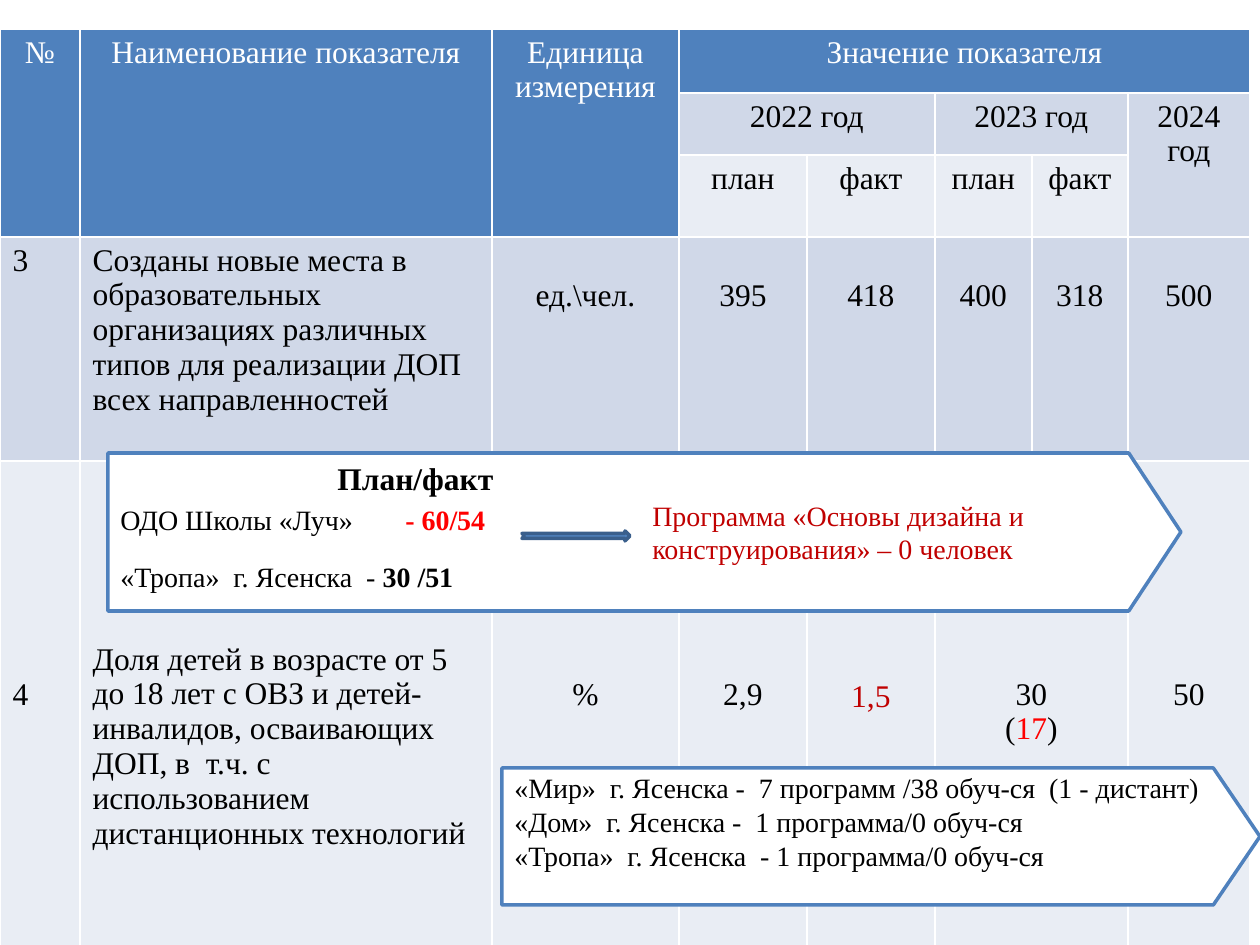
"""Build the slide with planned and actual indicator values."""
from lxml.etree import SubElement
from pptx import Presentation
from pptx.dml.color import RGBColor
from pptx.enum.shapes import MSO_SHAPE
from pptx.enum.text import MSO_ANCHOR, PP_ALIGN
from pptx.oxml.ns import qn
from pptx.util import Pt

EMU_PER_PX = 914400 / 126
BLUE, DARK_BLUE, BAND, LIGHT = "4F81BD", "3A5F8C", "D0D8E8", "E9EDF4"
WHITE, BLACK, RED, DARK_RED = "FFFFFF", "000000", "FF0000", "C00000"
LEFT, CENTER = PP_ALIGN.LEFT, PP_ALIGN.CENTER


def px(length):
    return round(length * EMU_PER_PX)


def rgb(value):
    return RGBColor.from_string(value)


def write(frame, paragraphs, size=18, color=BLACK, bold=False, align=LEFT, gap=0, tab=None):
    """Fill a frame; a paragraph is a string or a list of (text, color, bold) runs."""
    frame.word_wrap = True
    for index, content in enumerate(paragraphs):
        paragraph = frame.add_paragraph() if index else frame.paragraphs[0]
        paragraph.alignment = align
        if index and gap:
            paragraph.space_before = Pt(gap)
        if tab:
            stops = SubElement(paragraph._p.get_or_add_pPr(), qn("a:tabLst"))
            SubElement(stops, qn("a:tab"), pos=str(px(tab)), algn="l")
        runs = [(content, color, bold)] if isinstance(content, str) else content
        for text, run_color, run_bold in runs:
            run = paragraph.add_run()
            run.text = text
            run.font.name = "Times New Roman"
            run.font.size = Pt(size)
            run.font.bold = run_bold
            run.font.color.rgb = rgb(run_color)


class IndicatorSlide:
    """Hold the current slide and draw its elements in one style."""

    def __init__(self, slide):
        self.shapes = slide.shapes

    def table(self, left, top, widths, heights, fills):
        table = self.shapes.add_table(len(heights), len(widths), px(left), px(top),
                                      px(sum(widths)), px(sum(heights))).table
        table.first_row = table.horz_banding = False
        for column, width in zip(table.columns, widths):
            column.width = px(width)
        for row, height, fill in zip(table.rows, heights, fills):
            row.height = px(height)
            for cell in row.cells:
                self.border(cell)
                self.paint(cell, fill)
        return table

    def border(self, cell):
        properties = cell._tc.get_or_add_tcPr()
        for side in ("lnL", "lnR", "lnT", "lnB"):
            line = SubElement(properties, qn(f"a:{side}"), w=str(Pt(1)))
            SubElement(SubElement(line, qn("a:solidFill")), qn("a:srgbClr"), val=WHITE)

    def paint(self, item, fill):
        item.fill.solid()
        item.fill.fore_color.rgb = rgb(fill)

    def cell(self, table, row, column, paragraphs, span=(1, 1), top=6, **style):
        cell = table.cell(row, column)
        if span != (1, 1):
            cell.merge(table.cell(row + span[0] - 1, column + span[1] - 1))
        cell.margin_top = px(top)
        write(cell.text_frame, paragraphs, **style)

    def shape(self, kind, left, top, width, height, fill, line):
        shape = self.shapes.add_shape(kind, px(left), px(top), px(width), px(height))
        shape.shadow.inherit = False
        self.paint(shape, fill)
        shape.line.color.rgb = rgb(line)
        shape.line.width = Pt(2)
        return shape

    def callout(self, left, top, width, height, point, paragraphs, inset, **style):
        shape = self.shape(MSO_SHAPE.PENTAGON, left, top, width, height, WHITE, BLUE)
        shape.adjustments[0] = point
        shape.text_frame.vertical_anchor = MSO_ANCHOR.TOP
        shape.text_frame.margin_top = px(inset)
        write(shape.text_frame, paragraphs, size=16, **style)

    def label(self, left, top, width, height, text, **style):
        box = self.shapes.add_textbox(px(left), px(top), px(width), px(height))
        write(box.text_frame, [text], **style)


def add_indicators(page):
    """Draw the table of indicators."""
    table = page.table(0, 29, [80, 412, 187, 128, 128, 97, 96, 122],
                       [64, 62, 60, 224, 495], [BLUE, BAND, LIGHT, BAND, LIGHT])

    for column, title in enumerate(["№", "Наименование показателя", "Единица измерения"]):
        page.cell(table, 0, column, [title], span=(3, 1), color=WHITE, align=CENTER)
    page.cell(table, 0, 3, ["Значение показателя"], span=(1, 5), color=WHITE, align=CENTER)
    for column, year in ((3, 2022), (5, 2023)):
        page.cell(table, 1, column, [f"{year} год"], span=(1, 2), align=CENTER)
        for offset, title in enumerate(["план", "факт"]):
            page.cell(table, 2, column + offset, [title], align=CENTER)
    page.cell(table, 1, 7, ["2024 год"], span=(2, 1), align=CENTER)

    page.cell(table, 3, 0, ["3"])
    page.cell(table, 3, 1, ["Созданы новые места в образовательных",
                            "организациях различных типов для реализации ДОП всех направленностей"])
    for column, value in enumerate(["ед.\\чел.", "395", "418", "400", "318", "500"], start=2):
        page.cell(table, 3, column, [value], top=41, align=CENTER)

    page.cell(table, 4, 0, ["4"], top=216)
    page.cell(table, 4, 1, ["Доля детей в возрасте от 5 до 18 лет с ОВЗ и детей-инвалидов, осваивающих",
                            "ДОП, в  т.ч. с использованием", "дистанционных технологий"], top=181)
    for column, value in ((2, "%"), (3, "2,9"), (7, "50")):
        page.cell(table, 4, column, [value], top=216, align=CENTER)
    page.cell(table, 4, 4, ["1,5"], top=218, color=DARK_RED, align=CENTER)
    share = [("(", BLACK, False), ("17", RED, False), (")", BLACK, False)]
    page.cell(table, 4, 5, ["30", share], span=(1, 2), top=216, align=CENTER)


def add_callouts(page):
    """Draw the callouts with the details by organisation."""
    school = [("ОДО Школы «Луч»\t", BLACK, False), ("- 60/54", RED, True)]
    trail_club = [("«Тропа»  г. Ясенска  - ", BLACK, False), ("30 /51", BLACK, True)]
    page.callout(108, 453, 1073, 158, 0.33, [school, trail_club], inset=50, gap=13, tab=285)
    page.shape(MSO_SHAPE.NOTCHED_RIGHT_ARROW, 522, 531, 108, 10, BLUE, DARK_BLUE)
    page.label(325, 453, 207, 50, "План/факт", bold=True)
    page.label(640, 492, 452, 81, "Программа «Основы дизайна и конструирования» – 0 человек",
               size=16, color=DARK_RED)
    page.callout(502, 768, 758, 137, 0.34, [
        "«Мир»  г. Ясенска -  7 программ /38 обуч-ся  (1 - дистант)",
        "«Дом»  г. Ясенска -  1 программа/0 обуч-ся",
        "«Тропа»  г. Ясенска  - 1 программа/0 обуч-ся"], inset=3)


def main():
    presentation = Presentation()
    presentation.slide_width, presentation.slide_height = px(1260), px(945)
    page = IndicatorSlide(presentation.slides.add_slide(presentation.slide_layouts[6]))
    add_indicators(page)
    add_callouts(page)
    presentation.save("out.pptx")


if __name__ == "__main__":
    main()
